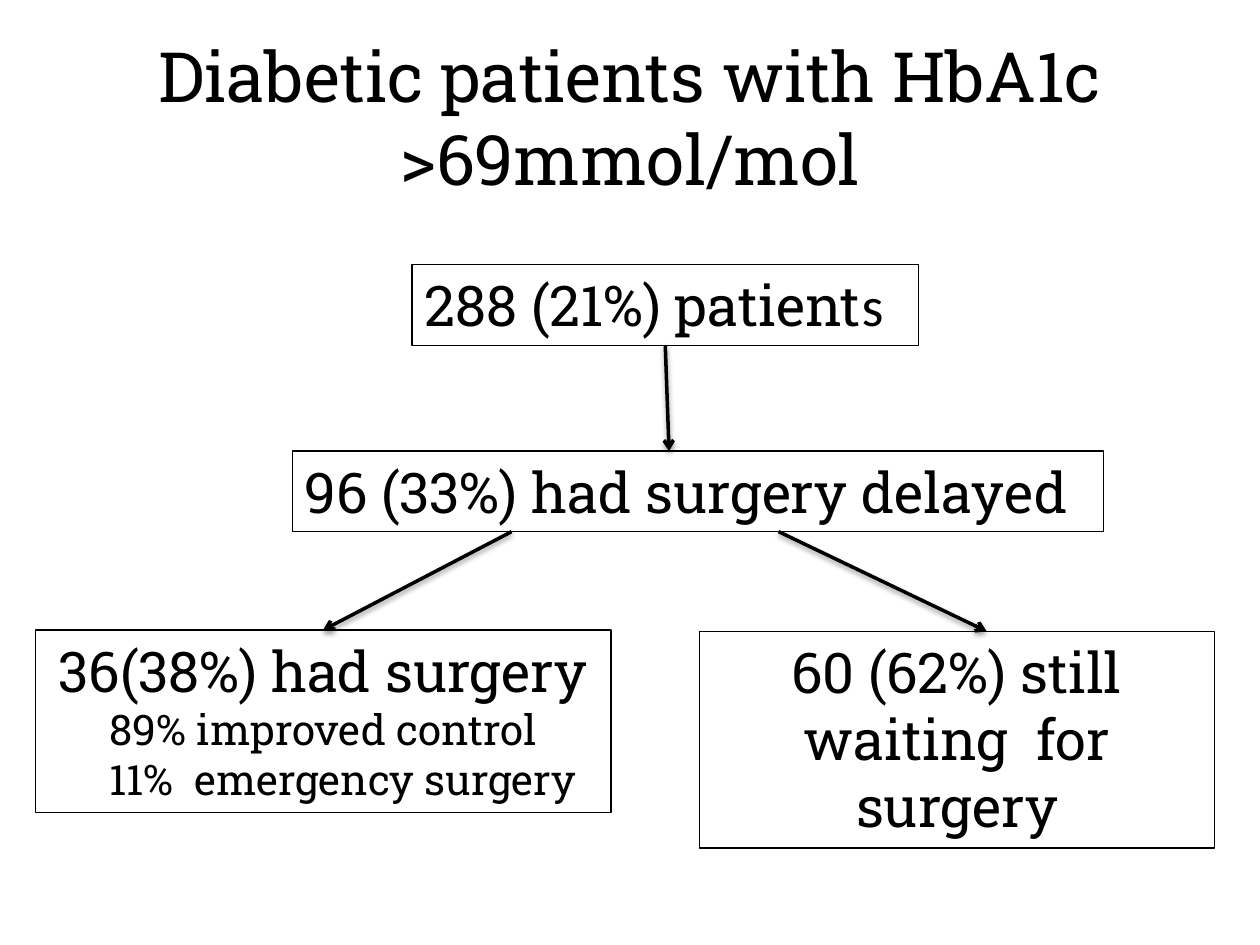
from lxml.etree import SubElement
from pptx import Presentation
from pptx.dml.color import RGBColor
from pptx.enum.shapes import MSO_CONNECTOR, MSO_SHAPE
from pptx.enum.text import MSO_ANCHOR, PP_ALIGN
from pptx.oxml.ns import qn
from pptx.util import Inches, Pt

COLORS = {"ink": "000000"}
FONT = "Roboto Slab"
INK = RGBColor.from_string(COLORS["ink"])


def style_run(run, size, font=FONT):
    """Give a run its size, typeface and ink colour."""
    run.font.size = Pt(size)
    run.font.name = font
    run.font.color.rgb = INK


def add_title(slide, left, top, width, height, wording):
    """Place the centred slide title in the given box."""
    title = slide.shapes.add_textbox(Inches(left), Inches(top), Inches(width), Inches(height))
    frame = title.text_frame
    frame.word_wrap = True
    frame.vertical_anchor = MSO_ANCHOR.MIDDLE
    frame.text = wording
    frame.paragraphs[0].alignment = PP_ALIGN.CENTER
    style_run(frame.paragraphs[0].runs[0], 39.6)


def add_group(slide, left, top, width, height, lines, align=PP_ALIGN.CENTER):
    """Place an outlined patient group whose lines are (wording, size) pairs."""
    group = slide.shapes.add_shape(
        MSO_SHAPE.RECTANGLE, Inches(left), Inches(top), Inches(width), Inches(height))
    group.shadow.inherit = False
    group.fill.background()
    group.line.color.rgb = INK
    group.line.width = Pt(0.75)
    frame = group.text_frame
    frame.word_wrap = True
    frame.vertical_anchor = MSO_ANCHOR.TOP
    frame.text = "\n".join(wording for wording, size in lines)
    for paragraph, (wording, size) in zip(frame.paragraphs, lines):
        paragraph.alignment = align
        style_run(paragraph.runs[0], size)
    return group


def add_arrow(slide, start, end, source=None, target=None):
    """Draw a shadowed arrow, joined to a source's bottom or a target's top."""
    arrow = slide.shapes.add_connector(
        MSO_CONNECTOR.STRAIGHT, *(Inches(length) for length in start + end))
    if source is not None:
        arrow.begin_connect(source, 2)
    if target is not None:
        arrow.end_connect(target, 0)
    arrow.line.color.rgb = INK
    arrow.line.width = Pt(2)
    SubElement(arrow.line._get_or_add_ln(), qn("a:tailEnd"), type="arrow")
    effects = SubElement(arrow._element.spPr, qn("a:effectLst"))
    shadow = SubElement(effects, qn("a:outerShdw"), blurRad=str(Pt(3.1)),
                        dist=str(Pt(1.6)), dir="5400000", rotWithShape="0")
    shade = SubElement(shadow, qn("a:srgbClr"), val=COLORS["ink"])
    SubElement(shade, qn("a:alpha"), val="38000")


def add_patient_flow(slide, left, top):
    """Place the tree of patient groups and its arrows from a top-left corner."""
    diabetic = add_group(slide, left + 2.99, top, 4.02, 0.64,
                         [("288 (21%) patient", 32)], PP_ALIGN.LEFT)
    plural = diabetic.text_frame.paragraphs[0].add_run()
    plural.text = "s"
    style_run(plural, 32, "Calibri")
    add_group(slide, left + 2.04, top + 1.48, 6.44, 0.64,
              [("96 (33%) had surgery delayed", 32)], PP_ALIGN.LEFT)
    operated = add_group(slide, left, top + 2.9, 4.57, 1.45,
                         [("36(38%) had surgery", 32), ("89% improved control", 24),
                          ("11%  emergency surgery", 24)])
    emergency = operated.text_frame.paragraphs[2]
    emergency._p.get_or_add_pPr().set("marL", str(Inches(0.31)))
    add_group(slide, left + 5.27, top + 2.91, 4.09, 1.72,
              [("60 (62%) still waiting  for surgery", 32)])
    add_arrow(slide, (left + 5.9, top + 2.12), (left + 7.55, top + 2.91))
    add_arrow(slide, (left + 3.78, top + 2.12), (left + 2.28, top + 2.9), target=operated)
    add_arrow(slide, (left + 5, top + 0.64), (left + 5.03, top + 1.48), source=diabetic)


def main():
    """Build and save the slide."""
    presentation = Presentation()
    presentation.slide_width = Inches(10)
    presentation.slide_height = Inches(7.5)
    slide = presentation.slides.add_slide(presentation.slide_layouts[6])
    add_title(slide, 0.5, 0.3, 9, 1.25, "Diabetic patients with HbA1c >69mmol/mol")
    add_patient_flow(slide, 0.28, 2.1)
    presentation.save("out.pptx")


if __name__ == "__main__":
    main()
